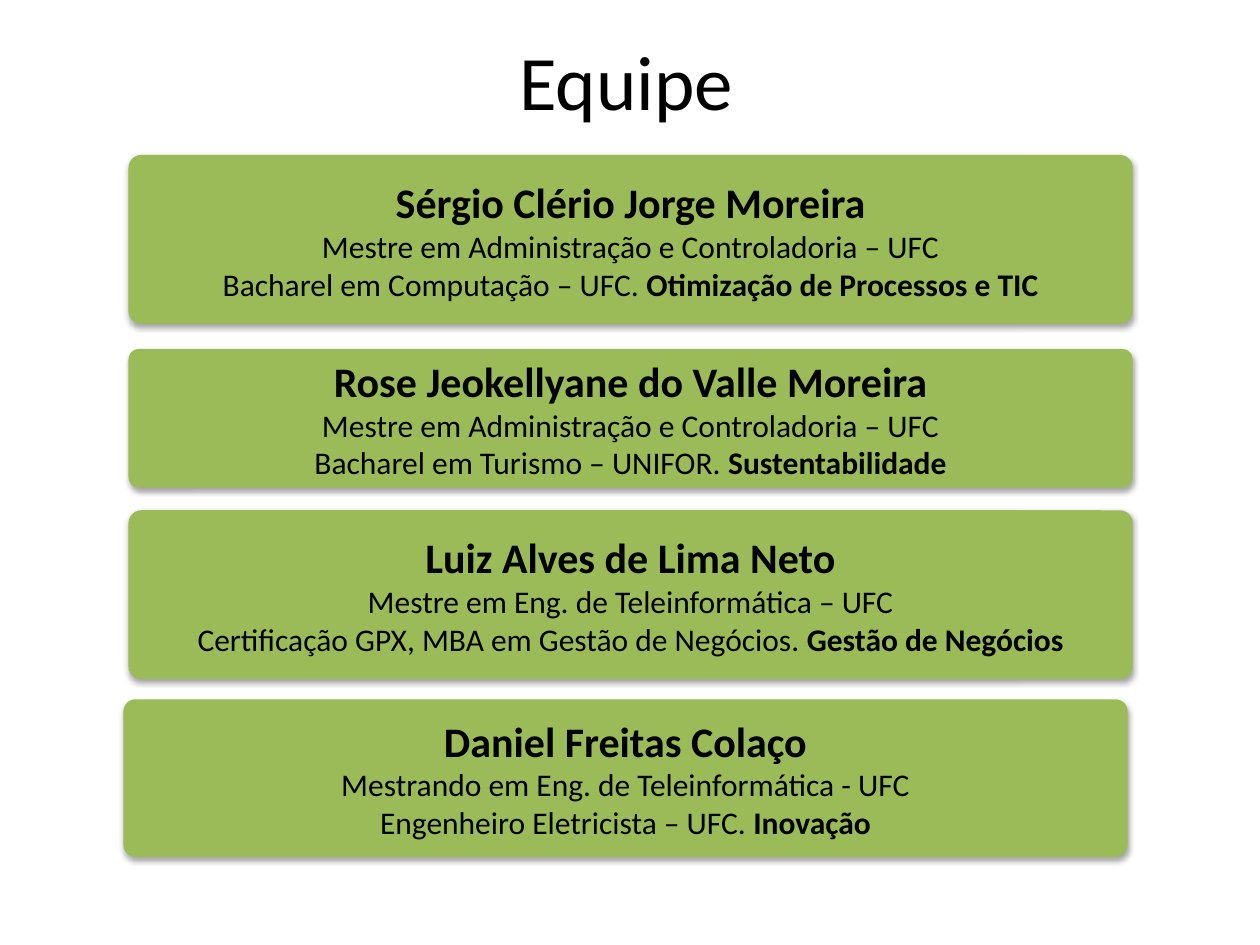
from lxml import etree
from pptx import Presentation
from pptx.dml.color import RGBColor
from pptx.enum.shapes import MSO_SHAPE
from pptx.enum.text import MSO_ANCHOR, PP_ALIGN
from pptx.oxml.ns import qn
from pptx.util import Inches, Pt

ROUNDED = MSO_SHAPE.ROUNDED_RECTANGLE
MIDDLE = MSO_ANCHOR.MIDDLE
CENTER = PP_ALIGN.CENTER

BLACK = "000000"
GREEN = "9BBB59"
CARD_WIDTH = 7.97

TITLE = {"name": "Calibri", "size": Pt(44), "bold": False}
NAME = {"name": "Calibri", "size": Pt(24), "bold": True}
DETAIL = {"name": "Calibri", "size": Pt(18), "bold": False}
AREA = {**DETAIL, "bold": True}

# left, top, height, name, degree, background, area
MEMBERS = [
    (1.02, 1.23, 1.34, "Sérgio Clério Jorge Moreira",
     "Mestre em Administração e Controladoria – UFC",
     "Bacharel em Computação – UFC. ", "Otimização de Processos e TIC"),
    (1.02, 2.77, 1.1, "Rose Jeokellyane do Valle Moreira",
     "Mestre em Administração e Controladoria – UFC",
     "Bacharel em Turismo – UNIFOR. ", "Sustentabilidade"),
    (1.02, 4.05, 1.34, "Luiz Alves de Lima Neto",
     "Mestre em Eng. de Teleinformática – UFC",
     "Certificação GPX, MBA em Gestão de Negócios. ", "Gestão de Negócios"),
    (0.98, 5.55, 1.25, "Daniel Freitas Colaço",
     "Mestrando em Eng. de Teleinformática - UFC",
     "Engenheiro Eletricista – UFC. ", "Inovação"),
]


def color(value):
    return RGBColor.from_string(value)


def write_text(frame, lines, wrap):
    """Fill a frame with centred lines, each a list of (text, format) spans."""
    frame.word_wrap = wrap
    frame.vertical_anchor = MIDDLE
    for index, spans in enumerate(lines):
        para = frame.add_paragraph() if index else frame.paragraphs[0]
        para.alignment = CENTER
        for text, style in spans:
            span = para.add_run()
            span.text = text
            span.font.color.rgb = color(BLACK)
            for attribute, value in style.items():
                setattr(span.font, attribute, value)


def add_shadow(shape):
    """Give the shape a soft shadow straight below it."""
    shape.shadow.inherit = False
    effects = shape._element.spPr.find(qn("a:effectLst"))
    shadow = etree.SubElement(
        effects, qn("a:outerShdw"), blurRad=str(Pt(3.1)), dist=str(Pt(1.8)),
        dir="5400000", rotWithShape="0")
    tint = etree.SubElement(shadow, qn("a:srgbClr"), val=BLACK)
    etree.SubElement(tint, qn("a:alpha"), val="35000")


def add_title(page, text):
    box = page.shapes.add_textbox(
        Inches(1.38), Inches(0.01), Inches(7.18), Inches(1.25))
    write_text(box.text_frame, [[(text, TITLE)]], wrap=True)


def add_card(page, left, top, height, name, degree, background, area):
    card = page.shapes.add_shape(
        ROUNDED, Inches(left), Inches(top), Inches(CARD_WIDTH), Inches(height))
    card.adjustments[0] = 0.076
    card.fill.solid()
    card.fill.fore_color.rgb = color(GREEN)
    card.line.fill.background()
    add_shadow(card)
    lines = [[(name, NAME)], [(degree, DETAIL)],
             [(background, DETAIL), (area, AREA)]]
    write_text(card.text_frame, lines, wrap=False)


def main():
    deck = Presentation()
    deck.slide_width, deck.slide_height = Inches(10), Inches(7.5)
    page = deck.slides.add_slide(deck.slide_layouts[6])

    # Team cards
    for member in MEMBERS:
        add_card(page, *member)

    # Heading
    add_title(page, "Equipe")

    deck.save("out.pptx")


if __name__ == "__main__":
    main()
